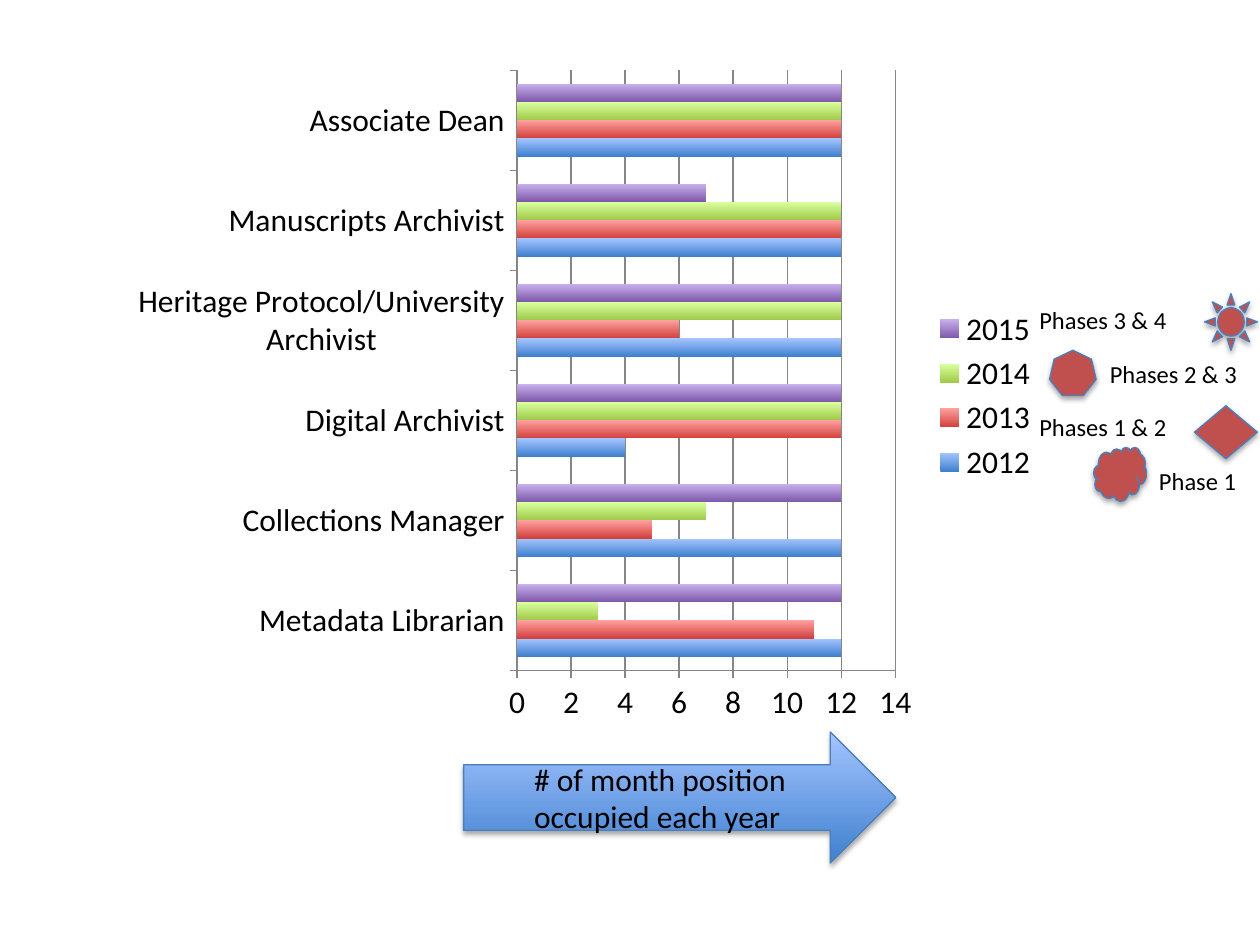
from dataclasses import dataclass

from lxml import etree
from pptx import Presentation
from pptx.chart.data import CategoryChartData
from pptx.dml.color import RGBColor
from pptx.enum.chart import XL_CHART_TYPE, XL_LEGEND_POSITION, XL_TICK_MARK
from pptx.enum.shapes import MSO_SHAPE
from pptx.oxml.ns import qn
from pptx.util import Inches, Pt

BAR_CLUSTERED = XL_CHART_TYPE.BAR_CLUSTERED
LEGEND_RIGHT = XL_LEGEND_POSITION.RIGHT
TICK_OUTSIDE = XL_TICK_MARK.OUTSIDE
SUN, HEPTAGON = MSO_SHAPE.SUN, MSO_SHAPE.HEPTAGON
CLOUD, DIAMOND = MSO_SHAPE.CLOUD, MSO_SHAPE.DIAMOND
RIGHT_ARROW = MSO_SHAPE.RIGHT_ARROW

COLUMNS, ROWS = 100, 75
CELL = Inches(0.1)


@dataclass(frozen=True)
class Theme:
    """Colours, font and type sizes of the slide."""
    font: str = "Calibri"
    body_size: int = 18
    label_size: int = 14
    text: str = "000000"
    marker: str = "C0504D"
    outline: str = "4B7EBC"
    axis: str = "868686"
    blue: tuple = ("3F80CE", "A4C4FF")
    red: tuple = ("D1403C", "FFA19F")
    green: tuple = ("9FCA48", "DAFF9F")
    purple: tuple = ("7D57A8", "C8B0ED")


THEME = Theme()

POSITIONS = ["Metadata Librarian", "Collections Manager", "Digital Archivist",
             "Heritage Protocol/University Archivist",
             "Manuscripts Archivist", "Associate Dean"]
MONTHS_BY_YEAR = {
    "2012": ((12, 12, 4, 12, 12, 12), THEME.blue),
    "2013": ((11, 5, 12, 6, 12, 12), THEME.red),
    "2014": ((3, 7, 12, 12, 12, 12), THEME.green),
    "2015": ((12, 12, 12, 12, 7, 12), THEME.purple),
}
PHASE_MARKERS = [
    (SUN, (95.6, 23.3, 4.2, 4.5)),
    (HEPTAGON, (83.3, 27.8, 3.7, 3.6)),
    (CLOUD, (86.8, 35.5, 4.2, 4.3)),
    (DIAMOND, (94.8, 32.2, 5, 4.2)),
]
PHASE_LABELS = [
    ("Phase 1", (91, 36.5, 8.7, 3.4)),
    ("Phases 1 & 2", (81.5, 32.2, 13.2, 3.4)),
    ("Phases 2 & 3", (87.1, 28, 12.7, 3.4)),
    ("Phases 3 & 4", (81.5, 23.7, 14.1, 3.4)),
]


def place(box):
    """Turn grid columns and rows into slide lengths."""
    return [round(cells * CELL) for cells in box]


def color(value):
    """Return the colour for a hexadecimal value."""
    return RGBColor.from_string(value)


def format_font(font, size):
    """Apply the slide's typeface and text colour."""
    font.name = THEME.font
    font.size = Pt(size)
    font.color.rgb = color(THEME.text)


def fill_gradient(fill, shades):
    """Fill from the dark shade at the bottom to the light one at the top."""
    fill.gradient()
    fill.gradient_angle = 90
    for stop, shade in zip(fill.gradient_stops, shades):
        stop.color.rgb = color(shade)


def add_shadow(shape):
    """Give a shape a soft shadow straight below it."""
    shape.shadow.inherit = False
    effects = shape._element.spPr.find(qn("a:effectLst"))
    shadow = etree.SubElement(effects, qn("a:outerShdw"), blurRad=str(Pt(3.1)),
                              dist=str(Pt(1.8)), dir="5400000", rotWithShape="0")
    shade = etree.SubElement(shadow, qn("a:srgbClr"), val="000000")
    etree.SubElement(shade, qn("a:alpha"), val="35000")


def add_outlined_shape(slide, kind, box):
    """Add a shadowed preset shape with a thin outline."""
    shape = slide.shapes.add_shape(kind, *place(box))
    shape.line.color.rgb = color(THEME.outline)
    shape.line.width = Pt(0.75)
    add_shadow(shape)
    return shape


def add_marker(slide, kind, box):
    """Add a solid phase marker."""
    marker = add_outlined_shape(slide, kind, box)
    marker.fill.solid()
    marker.fill.fore_color.rgb = color(THEME.marker)


def add_label(slide, text, box, size):
    """Add a wrapped text box."""
    text_frame = slide.shapes.add_textbox(*place(box)).text_frame
    text_frame.word_wrap = True
    text_frame.text = text
    format_font(text_frame.paragraphs[0].runs[0].font, size)


def format_axis(axis):
    """Set the ticks and line of a chart axis."""
    axis.major_tick_mark = TICK_OUTSIDE
    axis.format.line.color.rgb = color(THEME.axis)
    axis.format.line.width = Pt(0.75)


def add_months_chart(slide, box):
    """Add the bar chart of months occupied by position and year."""
    data = CategoryChartData(number_format="General")
    data.categories = POSITIONS
    for year, (months, _) in MONTHS_BY_YEAR.items():
        data.add_series(year, months)
    chart = slide.shapes.add_chart(BAR_CLUSTERED, *place(box), data).chart
    format_font(chart.font, THEME.body_size)
    chart.has_title = False
    chart.has_legend = True
    chart.legend.position = LEGEND_RIGHT
    chart.legend.include_in_layout = False
    format_axis(chart.category_axis)
    value_axis = chart.value_axis
    format_axis(value_axis)
    value_axis.minimum_scale, value_axis.maximum_scale = 0, 14
    value_axis.major_unit = 2
    value_axis.has_major_gridlines = True
    gridline = value_axis.major_gridlines.format.line
    gridline.color.rgb = color(THEME.axis)
    gridline.width = Pt(0.75)
    plot = chart.plots[0]
    plot.gap_width = 150
    plot.vary_by_categories = False
    for series, (_, shades) in zip(plot.series, MONTHS_BY_YEAR.values()):
        fill_gradient(series.format.fill, shades)


def main():
    """Build and save the slide."""
    presentation = Presentation()
    presentation.slide_width = COLUMNS * CELL
    presentation.slide_height = ROWS * CELL
    slide = presentation.slides.add_slide(presentation.slide_layouts[6])
    add_months_chart(slide, (9.5, 4.5, 73.9, 53.8))
    for kind, box in PHASE_MARKERS:
        add_marker(slide, kind, box)
    arrow = add_outlined_shape(slide, RIGHT_ARROW, (36.8, 58.1, 34.3, 10.4))
    fill_gradient(arrow.fill, THEME.blue)
    for text, box in PHASE_LABELS:
        add_label(slide, text, box, THEME.label_size)
    add_label(slide, "# of month position occupied each year",
              (41.4, 59.8, 23.1, 7.1), THEME.body_size)
    presentation.save("out.pptx")


if __name__ == "__main__":
    main()
